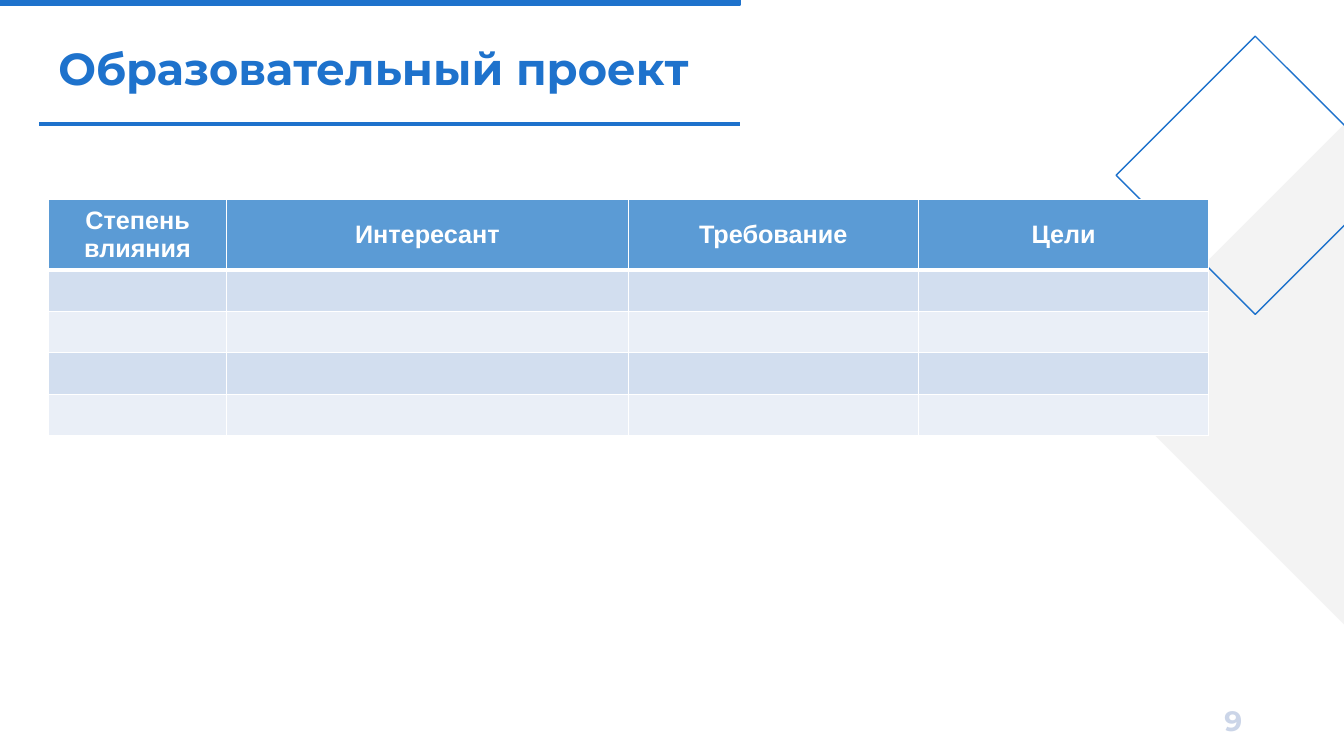
from dataclasses import dataclass

from lxml.etree import SubElement
from pptx import Presentation
from pptx.dml.color import RGBColor
from pptx.enum.shapes import MSO_CONNECTOR as Connector
from pptx.enum.shapes import MSO_SHAPE as Preset
from pptx.enum.text import MSO_ANCHOR as Anchor
from pptx.enum.text import PP_ALIGN as Align
from pptx.oxml.ns import qn
from pptx.slide import Slide
from pptx.table import _Cell as Cell
from pptx.text.text import TextFrame
from pptx.util import Inches, Pt

BLUE = RGBColor(0x1E, 0x72, 0xCC)
GREY = RGBColor(0xE6, 0xE6, 0xE6)
PALE_BLUE = RGBColor(0xCB, 0xD5, 0xE8)
WHITE = RGBColor(0xFF, 0xFF, 0xFF)
HEADER_FILL = RGBColor(0x5B, 0x9B, 0xD5)
BAND_FILLS = (RGBColor(0xD2, 0xDE, 0xEF), RGBColor(0xEA, 0xEF, 0xF7))

HEADERS = ("Степень влияния", "Интересант", "Требование", "Цели")
COLUMN_WIDTHS = (1.77, 3.98, 2.88, 2.88)
HEADER_HEIGHT = 0.64
ROW_HEIGHT = 0.41
BODY_ROWS = 4


@dataclass(frozen=True)
class Box:
    left: float
    top: float
    width: float
    height: float

    def lengths(self) -> tuple[Inches, ...]:
        return tuple(Inches(n) for n in (self.left, self.top, self.width, self.height))


@dataclass(frozen=True)
class Decoration:
    preset: Preset
    box: Box
    fill: RGBColor | None = None
    opacity: int = 100
    line: RGBColor | None = None


@dataclass(frozen=True)
class Label:
    text: str
    box: Box
    size: int
    color: RGBColor
    align: Align = Align.LEFT
    spacing: float = 1.0


DECORATIONS = (
    Decoration(Preset.RECTANGLE, Box(0, 0, 7.34, 0.05), fill=BLUE, line=BLUE),
    Decoration(Preset.DIAMOND, Box(10.85, 1.23, 4.97, 4.97), fill=GREY, opacity=46),
    Decoration(Preset.DIAMOND, Box(11.07, 0.36, 2.76, 2.76), line=BLUE),
)
LABELS = (
    Label("Образовательный проект", Box(0.48, 0.39, 11.5, 0.63), 32, BLUE, spacing=0.9),
    Label("9", Box(9.42, 6.95, 3, 0.4), 20, PALE_BLUE, Align.RIGHT),
)


def write_text(frame: TextFrame, text: str, font_name: str, size: int,
               color: RGBColor, align: Align, spacing: float = 1.0) -> None:
    paragraph = frame.paragraphs[0]
    paragraph.alignment = align
    paragraph.line_spacing = spacing
    run = paragraph.add_run()
    run.text = text
    font_format = {"name": font_name, "size": Pt(size), "bold": True}
    for attribute, value in font_format.items():
        setattr(run.font, attribute, value)
    run.font.color.rgb = color


def add_decoration(slide: Slide, item: Decoration) -> None:
    shape = slide.shapes.add_shape(item.preset, *item.box.lengths())
    shape.shadow.inherit = False
    if item.fill is None:
        shape.fill.background()
    else:
        shape.fill.solid()
        shape.fill.fore_color.rgb = item.fill
        if item.opacity < 100:
            color = shape.fill._xPr.find(qn("a:solidFill"))[0]
            SubElement(color, qn("a:alpha"), val=str(item.opacity * 1000))
    if item.line is None:
        shape.line.fill.background()
    else:
        shape.line.color.rgb = item.line
        shape.line.width = Pt(1)


def add_rule(slide: Slide) -> None:
    rule = slide.shapes.add_connector(
        Connector.STRAIGHT, Inches(0.39), Inches(1.23), Inches(7.34), Inches(1.23))
    rule.line.color.rgb = BLUE
    rule.line.width = Pt(2.25)
    SubElement(rule._element.spPr, qn("a:effectLst"))


def add_label(slide: Slide, label: Label) -> None:
    frame = slide.shapes.add_textbox(*label.box.lengths()).text_frame
    frame.word_wrap = True
    frame.vertical_anchor = Anchor.MIDDLE
    write_text(frame, label.text, "Montserrat", label.size, label.color,
               label.align, label.spacing)


def style_cell(cell: Cell, fill: RGBColor, top: int, bottom: int) -> None:
    properties = cell._tc.get_or_add_tcPr()
    for side, points in {"L": 1, "R": 1, "T": top, "B": bottom}.items():
        border = SubElement(properties, qn(f"a:ln{side}"), w=str(Pt(points)))
        solid = SubElement(border, qn("a:solidFill"))
        SubElement(solid, qn("a:srgbClr"), val=str(WHITE))
    cell.fill.solid()
    cell.fill.fore_color.rgb = fill


def add_requirements_table(slide: Slide) -> None:
    box = Box(0.48, 1.98, sum(COLUMN_WIDTHS), HEADER_HEIGHT + BODY_ROWS * ROW_HEIGHT)
    table = slide.shapes.add_table(
        BODY_ROWS + 1, len(HEADERS), *box.lengths()).table
    for column, width in zip(table.columns, COLUMN_WIDTHS):
        column.width = Inches(width)

    for index, row in enumerate(table.rows):
        row.height = Inches(ROW_HEIGHT if index else HEADER_HEIGHT)
        fill = BAND_FILLS[(index - 1) % 2] if index else HEADER_FILL
        for cell in row.cells:
            style_cell(cell, fill, top=3 if index == 1 else 1, bottom=1 if index else 3)

    for cell, text in zip(table.rows[0].cells, HEADERS):
        cell.vertical_anchor = Anchor.MIDDLE
        write_text(cell.text_frame, text, "Arial", 18, WHITE, Align.CENTER)


def main() -> None:
    presentation = Presentation()
    presentation.slide_width = Inches(13.33)
    presentation.slide_height = Inches(7.5)
    slide = presentation.slides.add_slide(presentation.slide_layouts[6])

    # Background decoration
    add_rule(slide)
    for item in DECORATIONS:
        add_decoration(slide, item)

    # Title, table and page number
    title, page_number = LABELS
    add_label(slide, title)
    add_requirements_table(slide)
    add_label(slide, page_number)

    presentation.save("out.pptx")


if __name__ == "__main__":
    main()
